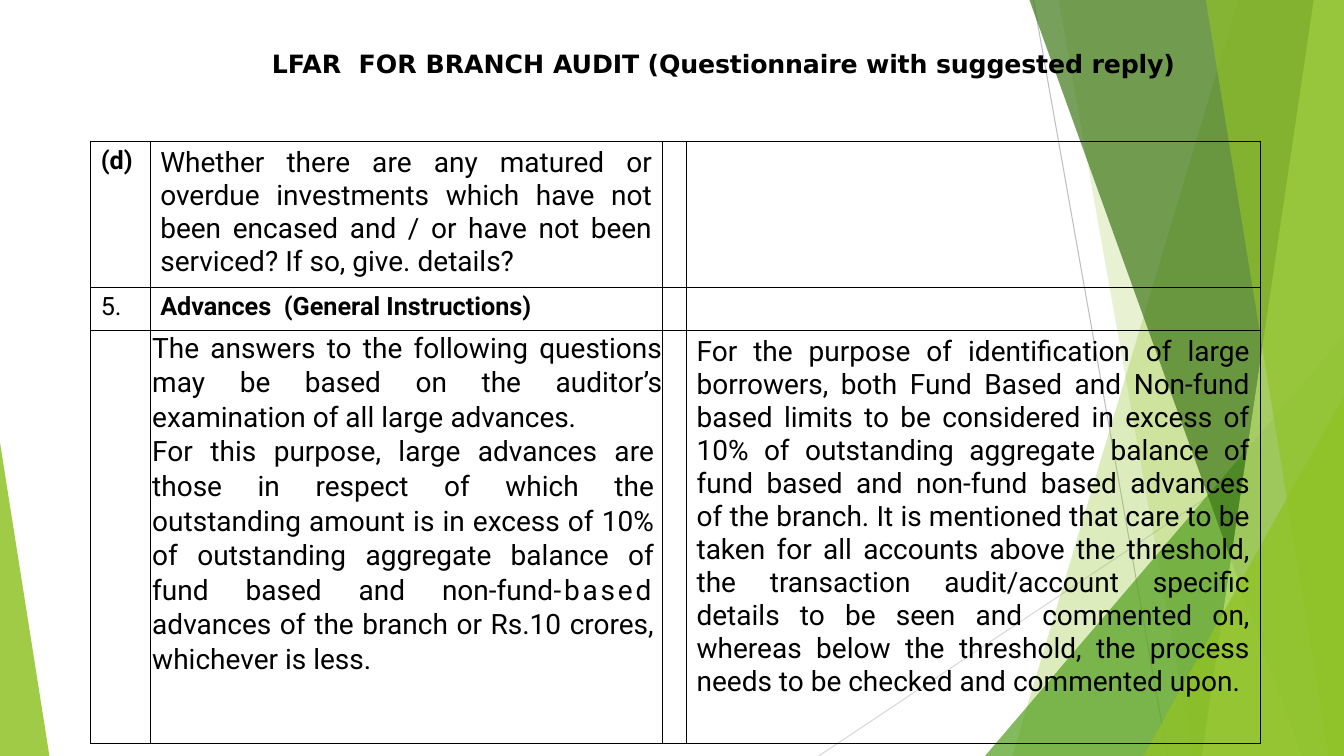
from lxml.etree import SubElement as Sub
from pptx import Presentation
from pptx.dml.color import RGBColor as RGB
from pptx.enum.shapes import MSO_CONNECTOR as Conn, MSO_SHAPE as Shape
from pptx.enum.text import PP_ALIGN as Align
from pptx.oxml.ns import qn
from pptx.util import Inches as In, Pt

W, H = 13.33, 7.5
THEME = dict(head="DejaVu Sans", body="Roboto", ink="000000", lime="90C226",
             leaf="54A021", dark="3F7819", pale="C0E474", small=18, large=20)

deck = Presentation()
deck.slide_width, deck.slide_height = In(W), In(H)
slide = deck.slides.add_slide(deck.slide_layouts[6])
items = slide.shapes


def paint(shape, tone, alpha):
    shape.shadow.inherit = False
    shape.line.fill.background()
    shape.fill.solid()
    shape.fill.fore_color.rgb = RGB.from_string(THEME[tone])
    color = shape.fill._xPr.find(qn("a:solidFill"))[0]
    Sub(color, qn("a:alpha"), val=str(alpha * 1000))


def write(para, runs, size, face="body", align=Align.LEFT, left=0, right=0):
    para.alignment = align
    props = para._p.get_or_add_pPr()
    props.set("marL", str(In(left)))
    props.set("marR", str(In(right)))
    props.set("indent", "0")
    for text, bold, gap in runs:
        run = para.add_run()
        run.text = text
        font = run.font
        font.name, font.size, font.bold = THEME[face], Pt(THEME[size]), bold
        font.color.rgb = RGB.from_string(THEME["ink"])
        if gap:
            run._r.get_or_add_rPr().set("spc", str(int(gap * 100)))


# Thin background lines
for x1, y1, x2, tone in ((10.25, 0, 11.58, "BFBFBF"), (W, 4.03, 8.12, "D9D9D9")):
    line = items.add_connector(Conn.STRAIGHT, In(x1), In(y1), In(x2), In(H))
    line.line.color.rgb = RGB.from_string(tone)
    line.line.width = Pt(0.75)
    Sub(line._element.spPr, qn("a:effectLst"))

# Facets: bands (top x, foot x) reach the right edge; wedges (left, width, height, apex) stand on the foot
facets = (
    ((12.28, 10.04), "lime", 30),
    ((10.5, 11.83), "lime", 20),
    ((W - 3.56, 3.56, 4.17, 1), "leaf", 72),
    ((10.21, 12.91), "dark", 70),
    ((13.03, 11.92), "pale", 70),
    ((11.96, 13.18), "lime", 65),
    ((W - 1.99, 1.99, 3.57, 1), "lime", 80),
    ((0, 0.49, 3.11, 0), "lime", 85),
)
for geom, tone, alpha in facets:
    if len(geom) == 2:
        top, foot = geom
        pen = items.build_freeform(In(top), 0)
        pen.add_line_segments([(In(W), 0), (In(W), In(H)), (In(foot), In(H))])
        facet = pen.convert_to_shape()
    else:
        left, wide, high, apex = geom
        facet = items.add_shape(Shape.ISOSCELES_TRIANGLE, In(left), In(H - high),
                                In(wide), In(high))
        facet.adjustments[0] = apex
    paint(facet, tone, alpha)

# Title
frame = items.add_textbox(In(2.11), In(0.47), In(10.38), In(0.4)).text_frame
frame.word_wrap = True
frame.margin_left = frame.margin_bottom = 0
frame.margin_top, frame.margin_right = In(0.01), In(0.27)
title = frame.paragraphs[0]
title.space_before = Pt(4.2)
write(title, [("LFAR  FOR BRANCH ", True, 0),
              ("AUDIT (Questionnaire with suggested reply)", True, -0.1)],
      "small", "head", Align.CENTER, 0.02)

# Table grid
cols, rows = (0.59, 5.08, 0.23, 5.69), (1.45, 0.43, 4.1)
grid = items.add_table(len(rows), len(cols), In(0.9), In(1.4),
                       In(sum(cols)), In(sum(rows))).table
grid.first_row = grid.horz_banding = False
for col, wide in zip(grid.columns, cols):
    col.width = In(wide)
for row, high in zip(grid.rows, rows):
    row.height = In(high)
for cell in grid.iter_cells():
    props = cell._tc.get_or_add_tcPr()
    for side in ("lnL", "lnR", "lnT", "lnB"):
        edge = Sub(props, qn("a:" + side), w=str(Pt(1)))
        Sub(Sub(edge, qn("a:solidFill")), qn("a:srgbClr"), val=THEME["ink"])
    cell.fill.background()

# Short cells and the reply
cells = (
    (0, 0, "(d)", True, "small", Align.LEFT),
    (0, 1, "Whether there are any matured or overdue investments which have not been "
     "encased and / or have not been serviced? If so, give. details?",
     False, "large", Align.JUSTIFY),
    (1, 0, "5.", False, "small", Align.LEFT),
    (1, 1, "Advances  (General Instructions)", True, "small", Align.JUSTIFY),
    (2, 3, "For the purpose of identification of large borrowers, both Fund Based and "
     "Non-fund based limits to be considered in excess of 10% of outstanding aggregate "
     "balance of fund based and non-fund based advances of the branch. It is mentioned "
     "that care to be taken for all accounts above the threshold, the transaction "
     "audit/account specific details to be seen and commented on, whereas below the "
     "threshold, the process needs to be checked and commented upon.",
     False, "large", Align.JUSTIFY),
)
for row, col, text, bold, size, align in cells:
    write(grid.cell(row, col).text_frame.paragraphs[0], [(text, bold, 0)], size, align=align)

# Instructions, set flush with the cell edges
cell = grid.cell(2, 1)
cell.margin_left = cell.margin_right = cell.margin_top = cell.margin_bottom = 0
frame = cell.text_frame
parts = (
    (0, [("The answers to the following questions may be based on the auditor’s "
          "examination of all large ", False, 0), ("advances.", False, -0.1)]),
    (0.08, [("For this purpose, large advances are those in respect of which the "
             "outstanding amount is in excess of 10% of outstanding aggregate balance of "
             "fund based and non-fund", False, 0), ("-based", False, 2),
            (" advances of the branch or Rs.10 crores, whichever is less.", False, 0)]),
)
for k, (right, runs) in enumerate(parts):
    para = frame.add_paragraph() if k else frame.paragraphs[0]
    para.line_spacing = 1.05
    write(para, runs, "large", align=Align.JUSTIFY, left=0.02, right=right)

deck.save("out.pptx")
